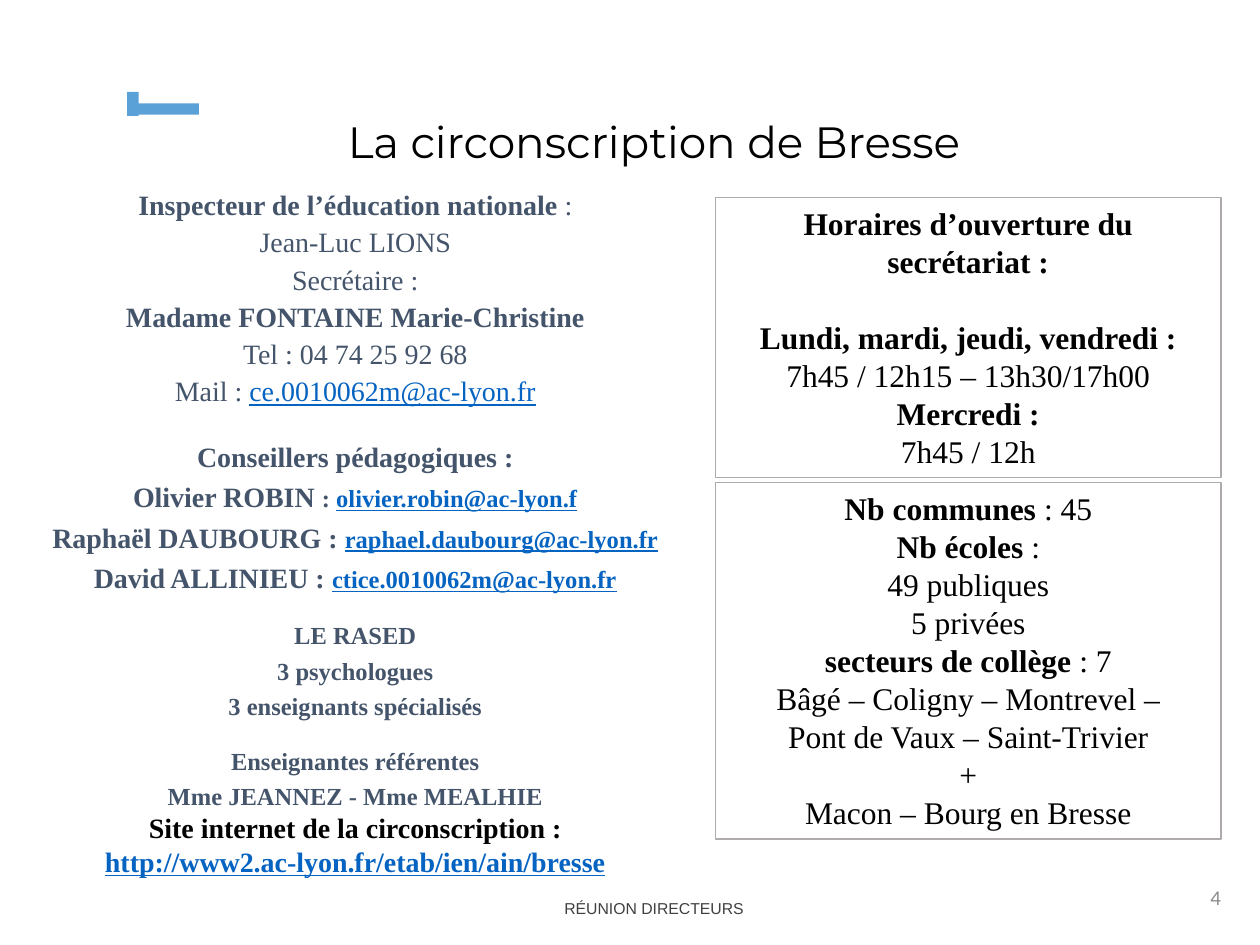
from pptx import Presentation
from pptx.dml.color import RGBColor
from pptx.enum import shapes, text
from pptx.util import Inches, Pt

BLACK = RGBColor(0x00, 0x00, 0x00)
SLATE = RGBColor(0x44, 0x54, 0x6A)
LINK = RGBColor(0x05, 0x63, 0xC1)
ACCENT = RGBColor(0x5A, 0xA1, 0xD8)
BORDER = RGBColor(0xAF, 0xAB, 0xAB)
FOOTER_GREY = RGBColor(0x40, 0x40, 0x40)
NUMBER_GREY = RGBColor(0x8C, 0x8C, 0x8C)

SERIF = "Times New Roman"
CENTER = text.PP_ALIGN.CENTER

# Run formats
NORMAL = {"name": SERIF, "size": Pt(16), "bold": False, "color": SLATE}
BOLD = {**NORMAL, "bold": True}
SMALL = {**BOLD, "size": Pt(14)}
MAIL = {**NORMAL, "color": LINK, "underline": True}
SMALL_MAIL = {**SMALL, "color": LINK, "underline": True}
SITE = {**BOLD, "color": BLACK}
SITE_LINK = {**BOLD, "color": LINK, "underline": True}
BOX = {"name": SERIF, "size": Pt(18), "bold": False, "color": BLACK}
BOX_BOLD = {**BOX, "bold": True}

# Each line: space before (pt), line spacing, runs
CONTACTS = [
    (0, 0.9, [("Inspecteur de l’éducation nationale", BOLD), (" :", NORMAL)]),
    (4, 0.9, [("Jean-Luc LIONS", NORMAL)]),
    (4, 0.9, [("Secrétaire :", NORMAL)]),
    (4, 0.9, [("Madame FONTAINE Marie-Christine", BOLD)]),
    (4, 0.9, [("Tel : 04 74 25 92 68", NORMAL)]),
    (4, 0.9, [("Mail : ", NORMAL), ("ce.0010062m@ac-lyon.fr", MAIL)]),
    (18, 1.0, [("Conseillers pédagogiques :", BOLD)]),
    (4, 1.0, [("Olivier ROBIN ", BOLD), (": ", SMALL),
              ("olivier.robin@ac-lyon.f", SMALL_MAIL)]),
    (4, 1.0, [("Raphaël DAUBOURG : ", BOLD),
              ("raphael.daubourg@ac-lyon.fr", SMALL_MAIL)]),
    (4, 1.0, [("David ALLINIEU : ", BOLD),
              ("ctice.0010062m@ac-lyon.fr", SMALL_MAIL)]),
    (14.5, 1.0, [("LE RASED", SMALL)]),
    (3.5, 1.0, [("3 psychologues", SMALL)]),
    (3.5, 1.0, [("3 enseignants spécialisés", SMALL)]),
    (14.5, 1.0, [("Enseignantes référentes", SMALL)]),
    (3.5, 1.0, [("Mme JEANNEZ - Mme MEALHIE", SMALL)]),
    (0, 1.0, [("Site internet de la circonscription :", SITE)]),
    (0, 1.0, [("http://www2.ac-lyon.fr/etab/ien/ain/bresse", SITE_LINK)]),
]

BOX_PITCH = Pt(21.7)
OPENING_HOURS = [
    (0, BOX_PITCH, [("Horaires d’ouverture du secrétariat :", BOX_BOLD)]),
    (21.7, BOX_PITCH, [("Lundi, mardi, jeudi, vendredi :", BOX_BOLD)]),
    (0, BOX_PITCH, [("7h45 / 12h15 – 13h30/17h00", BOX)]),
    (0, BOX_PITCH, [("Mercredi :", BOX_BOLD)]),
    (0, BOX_PITCH, [("7h45 / 12h", BOX)]),
]
KEY_FIGURES = [(0, BOX_PITCH, runs) for runs in (
    [("Nb communes ", BOX_BOLD), (": 45", BOX)],
    [("Nb écoles ", BOX_BOLD), (":", BOX)],
    [("49 publiques", BOX)],
    [("5 privées", BOX)],
    [("secteurs de collège ", BOX_BOLD), (": 7", BOX)],
    [("Bâgé – Coligny – Montrevel –", BOX)],
    [("Pont de Vaux – Saint-Trivier", BOX)],
    [("+", BOX)],
    [("Macon – Bourg en Bresse", BOX)],
)]


def place(shape, box):
    for side, length in zip(("left", "top", "width", "height"), box):
        setattr(shape, side, Inches(length))


def write_lines(frame, lines, align=CENTER, anchor=text.MSO_ANCHOR.TOP):
    frame.word_wrap = True
    frame.auto_size = text.MSO_AUTO_SIZE.NONE
    frame.vertical_anchor = anchor
    for index, (before, spacing, runs) in enumerate(lines):
        line = frame.add_paragraph() if index else frame.paragraphs[0]
        line.alignment = align
        line.space_before = Pt(before)
        line.space_after = Pt(0)
        line.line_spacing = spacing
        for words, style in runs:
            run = line.add_run()
            run.text = words
            for key, value in style.items():
                if key == "color":
                    run.font.color.rgb = value
                else:
                    setattr(run.font, key, value)


def add_title(slide, box):
    place(slide.shapes.title, box)
    style = {"name": "Montserrat", "size": Pt(25), "color": BLACK}
    write_lines(slide.shapes.title.text_frame,
                [(0, 0.9, [("La circonscription de Bresse", style)])])


def add_corner_mark(slide, left, top):
    for dx, dy, width, height in ((0, 0, 0.09, 0.19), (0.04, 0.09, 0.53, 0.09)):
        bar = slide.shapes.add_shape(
            shapes.MSO_SHAPE.RECTANGLE, Inches(left + dx), Inches(top + dy),
            Inches(width), Inches(height))
        bar.shadow.inherit = False
        bar.fill.solid()
        bar.fill.fore_color.rgb = ACCENT
        bar.line.fill.background()


def add_contacts(slide, box):
    contacts = slide.placeholders[1]
    place(contacts, box)
    write_lines(contacts.text_frame, CONTACTS)
    # Centred lines without bullets or indent
    for line in contacts.text_frame.paragraphs:
        properties = line._p.get_or_add_pPr()
        properties.set("marL", "0")
        properties.set("indent", "0")
        bullet = properties.makeelement(
            "{http://schemas.openxmlformats.org/drawingml/2006/main}buNone", {})
        properties.append(bullet)


def add_info_box(slide, box, lines):
    info = slide.shapes.add_shape(shapes.MSO_SHAPE.RECTANGLE,
                                  *[Inches(length) for length in box])
    info.shadow.inherit = False
    info.fill.background()
    info.line.color.rgb = BORDER
    info.line.width = Pt(0.75)
    write_lines(info.text_frame, lines)


def add_footer_text(slide, box, words, style, align, spacing):
    footer = slide.shapes.add_textbox(*[Inches(length) for length in box])
    write_lines(footer.text_frame, [(0, spacing, [(words, style)])],
                align, text.MSO_ANCHOR.MIDDLE)


def main():
    prs = Presentation()
    prs.slide_width, prs.slide_height = Inches(10), Inches(7.5)
    slide = prs.slides.add_slide(prs.slide_layouts[1])

    # Heading
    add_title(slide, (0.88, 0.91, 8.62, 0.56))
    add_corner_mark(slide, 1.01, 0.73)

    # Contacts on the left, framed facts on the right
    add_contacts(slide, (0.2, 1.47, 5.24, 5.57))
    add_info_box(slide, (5.68, 1.57, 4.01, 2.22), OPENING_HOURS)
    add_info_box(slide, (5.68, 3.83, 4.01, 2.83), KEY_FIGURES)

    # Footer and slide number
    add_footer_text(slide, (4.2, 7.04, 1.98, 0.31), "RÉUNION DIRECTEURS",
                    {"name": "Arial", "size": Pt(9), "color": FOOTER_GREY},
                    CENTER, Pt(13.2))
    add_footer_text(slide, (7.54, 6.92, 2.25, 0.4), "4",
                    {"name": "Calibri", "size": Pt(12), "color": NUMBER_GREY},
                    text.PP_ALIGN.RIGHT, 1.0)
    prs.save("out.pptx")


if __name__ == "__main__":
    main()
